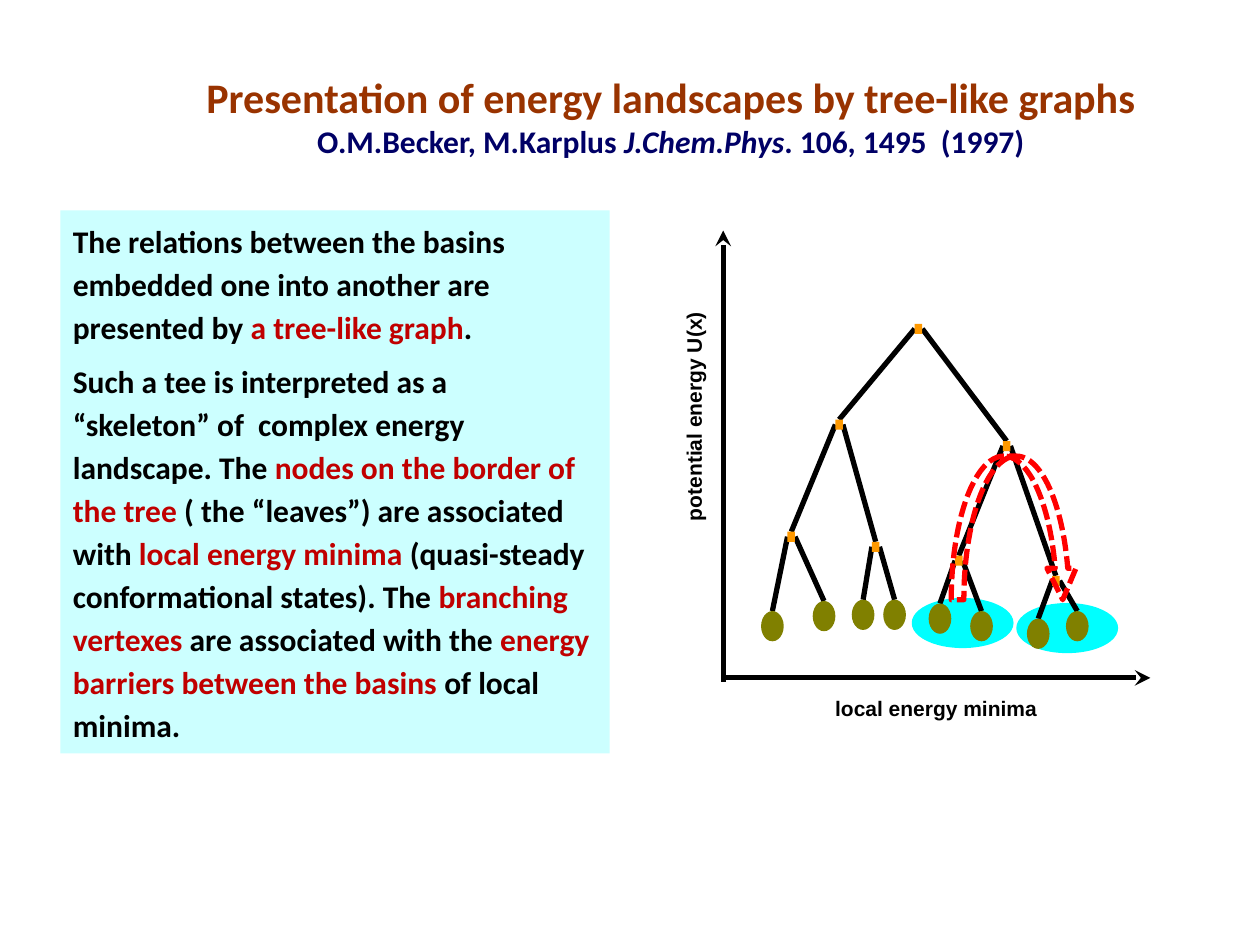
from dataclasses import dataclass
from lxml.etree import SubElement
from pptx import Presentation
from pptx.dml.color import RGBColor as RGB
from pptx.enum.dml import MSO_LINE as Dash
from pptx.enum.shapes import MSO_CONNECTOR as Conn, MSO_SHAPE as Kind
from pptx.enum.text import MSO_ANCHOR as Anchor, PP_ALIGN as Align
from pptx.oxml.ns import qn
from pptx.util import Cm, Pt


@dataclass(frozen=True)
class Theme:
    title: str = "993300"
    cite: str = "000066"
    ink: str = "000000"
    mark: str = "C00000"
    panel: str = "CCFFFF"
    basin: str = "00FFFF"
    leaf: str = "808000"
    node: str = "FF9900"
    path_red: str = "FF0000"
    head: int = 24
    body: int = 18
    label: int = 12
    stroke: int = 3
    sans: str = "Calibri"
    axis: str = "Arial"


T = Theme()

# Branching vertexes, then leaves: top centres in heap order,
# so the children of point i are points 2i+1 and 2i+2
NODES = [(7.29, 2.57), (6.66, 3.33), (7.99, 3.5),
         (6.28, 4.22), (6.95, 4.3), (7.61, 4.41), (8.38, 4.57)]
LEAVES = [(6.13, 4.85), (6.54, 4.77), (6.85, 4.76), (7.1, 4.76),
          (7.46, 4.79), (7.79, 4.85), (8.24, 4.91), (8.55, 4.85)]
BASINS = [(8.47, 4.8), (7.64, 4.76)]
NODE_W, NODE_H = 0.06, 0.08
LEAF_W, LEAF_H = 0.18, 0.24
BASIN_W, BASIN_H = 0.78, 0.37

BODY = [
    [("The relations between the basins embedded one into another are "
      "presented by ", T.ink), ("a tree-like graph", T.mark), (".", T.ink)],
    [("Such a tee is interpreted as a  “skeleton” of  complex energy "
      "landscape. The ", T.ink),
     ("nodes on the border of the tree", T.mark),
     (" ( the “leaves”) are associated with ", T.ink),
     ("local energy minima ", T.mark),
     ("(quasi-steady conformational states). The ", T.ink),
     ("branching vertexes ", T.mark),
     ("are associated with the ", T.ink),
     ("energy barriers between the basins ", T.mark),
     ("of local minima.", T.ink)],
]


def grid(*vals):
    """Slide grid units (2.54 cm) as lengths."""
    return [Cm(v * 2.54) for v in vals]


def add_run(para, text, color, size, font=T.sans, italic=False):
    run = para.add_run()
    run.text = text
    face = run.font
    face.name, face.size = font, Pt(size)
    face.bold, face.italic = True, italic
    face.color.rgb = RGB.from_string(color)


def add_box(slide, *box):
    shape = slide.shapes.add_textbox(*grid(*box))
    shape.text_frame.word_wrap = True
    return shape


def add_form(slide, kind, box, fill=None, line=None, width=2):
    shape = slide.shapes.add_shape(kind, *grid(*box))
    shape.shadow.inherit = False
    if fill:
        shape.fill.solid()
        shape.fill.fore_color.rgb = RGB.from_string(fill)
    else:
        shape.fill.background()
    if line:
        shape.line.color.rgb = RGB.from_string(line)
        shape.line.width = Pt(width)
    else:
        shape.line.fill.background()
    return shape


def add_line(slide, start, end, arrow=False):
    line = slide.shapes.add_connector(Conn.STRAIGHT, *grid(*start, *end))
    line.line.color.rgb = RGB.from_string(T.ink)
    line.line.width = Pt(T.stroke)
    if arrow:
        SubElement(line.line._get_or_add_ln(), qn("a:tailEnd"), type="stealth")
    SubElement(line._element.spPr, qn("a:effectLst"))


def add_dots(slide, kind, tops, wide, high, fill, line=None):
    """Equal shapes hung from their top centres."""
    for x, y in tops:
        add_form(slide, kind, (x - wide / 2, y, wide, high), fill, line)


def add_title(slide):
    frame = add_box(slide, 1.21, 0.52, 8.23, 0.81).text_frame
    head, cite = frame.paragraphs[0], frame.add_paragraph()
    head.alignment = cite.alignment = Align.CENTER
    add_run(head, "Presentation of energy landscapes by tree-like graphs",
            T.title, T.head)
    add_run(cite, "O.M.Becker, M.Karplus ", T.cite, T.body)
    add_run(cite, "J.Chem.Phys", T.cite, T.body, italic=True)
    add_run(cite, ". 106, 1495  (1997)", T.cite, T.body)


def add_panel(slide):
    shape = add_form(slide, Kind.RECTANGLE, (0.48, 1.67, 4.36, 4.31), T.panel)
    frame = shape.text_frame
    frame.word_wrap, frame.vertical_anchor = True, Anchor.TOP
    for i, parts in enumerate(BODY):
        para = frame.add_paragraph() if i else frame.paragraphs[0]
        para.alignment = Align.LEFT
        para.line_spacing, para.space_before = 1.14, Pt(6)
        for text, color in parts:
            add_run(para, text, color, T.body)


def add_axes(slide):
    add_line(slide, (5.74, 5.41), (5.74, 1.83), arrow=True)
    add_line(slide, (5.74, 5.38), (9.13, 5.38), arrow=True)
    side = add_box(slide, 4.4, 3.11, 2.13, 0.22)
    side.rotation = 270
    side.text_frame.margin_left = Cm(0.38)
    base = add_box(slide, 6.53, 5.47, 2.11, 0.32)
    base.text_frame.paragraphs[0].space_before = Pt(6)
    for box, text in ((side, "potential energy U(x)"),
                      (base, "local energy minima")):
        add_run(box.text_frame.paragraphs[0], text, T.ink, T.label, T.axis)


def add_tree(slide):
    points = NODES + LEAVES
    for i, (x, y) in enumerate(NODES):
        for side, child in ((-1, 2 * i + 1), (1, 2 * i + 2)):
            start = x + side * NODE_W / 2, y + NODE_H / 2
            add_line(slide, start, points[child])
    add_dots(slide, Kind.OVAL, LEAVES, LEAF_W, LEAF_H, T.leaf)
    add_dots(slide, Kind.RECTANGLE, NODES, NODE_W, NODE_H, T.node)


def add_jump(slide):
    arrow = add_form(slide, Kind.CURVED_DOWN_ARROW, (7.55, 3.62, 1, 1.14),
                     line=T.path_red, width=T.stroke)
    arrow.line.dash_style = Dash.SQUARE_DOT
    for i, val in enumerate((0.1, 0.23, 0.25)):
        arrow.adjustments[i] = val


def main():
    deck = Presentation()
    deck.slide_width, deck.slide_height = Cm(25.4), Cm(19.05)
    slide = deck.slides.add_slide(deck.slide_layouts[6])

    # Basins lie behind everything else
    add_dots(slide, Kind.OVAL, BASINS, BASIN_W, BASIN_H, T.basin, T.basin)

    # Text
    add_title(slide)
    add_panel(slide)

    # Graph and the jump between two basins
    add_axes(slide)
    add_tree(slide)
    add_jump(slide)

    deck.save("out.pptx")


if __name__ == "__main__":
    main()
